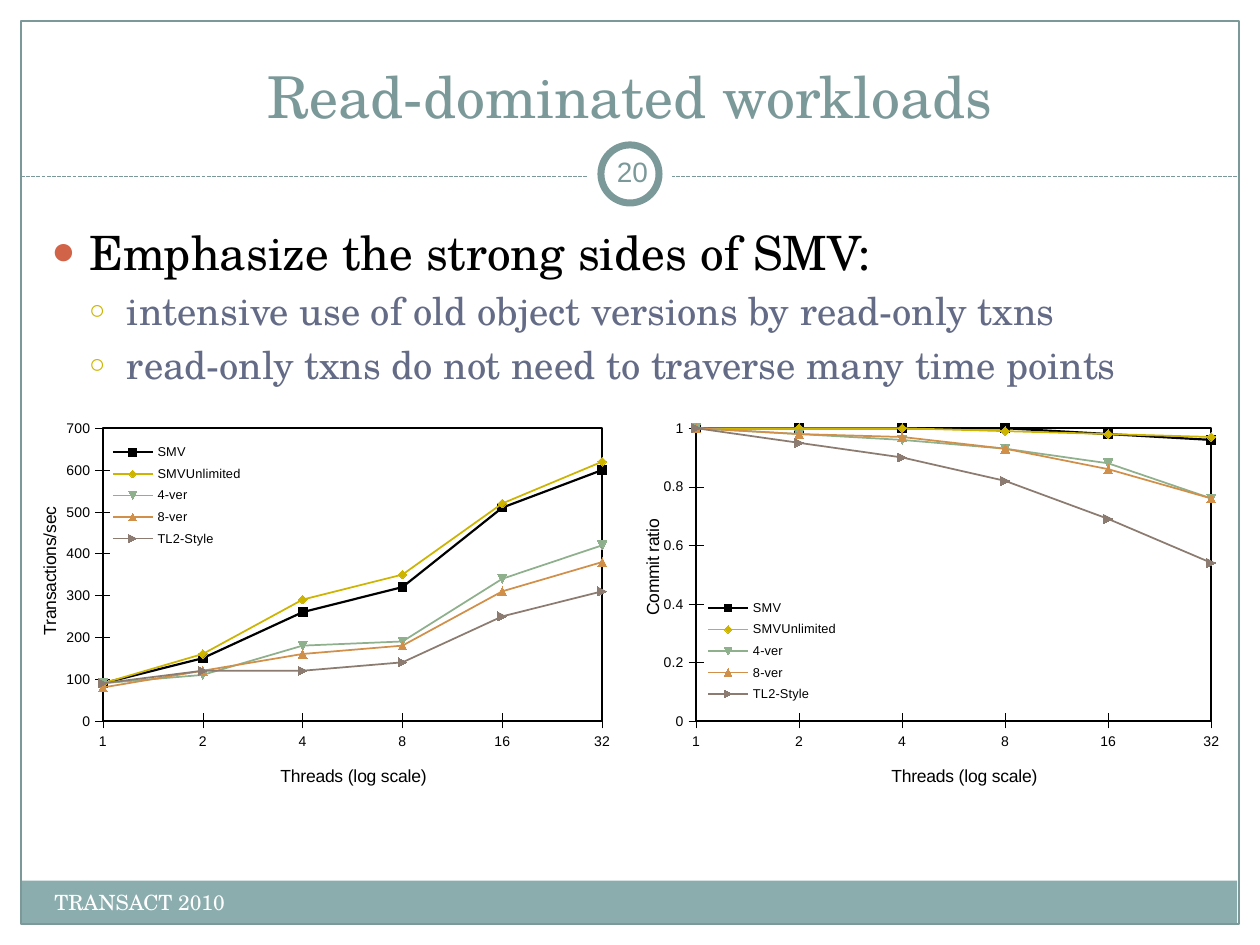
from lxml import etree
from pptx import Presentation
from pptx.chart.data import CategoryChartData
from pptx.dml.color import RGBColor
from pptx.enum.chart import XL_CHART_TYPE, XL_LEGEND_POSITION, XL_MARKER_STYLE, XL_TICK_MARK
from pptx.enum.dml import MSO_LINE
from pptx.enum.shapes import MSO_CONNECTOR, MSO_SHAPE
from pptx.enum.text import MSO_ANCHOR, PP_ALIGN
from pptx.oxml import parse_xml
from pptx.oxml.ns import nsdecls, qn
from pptx.util import Pt

LEFT, CENTER = PP_ALIGN.LEFT, PP_ALIGN.CENTER
TOP, MIDDLE, BOTTOM = MSO_ANCHOR.TOP, MSO_ANCHOR.MIDDLE, MSO_ANCHOR.BOTTOM
CROSS = XL_TICK_MARK.CROSS

BLACK = RGBColor(0x00, 0x00, 0x00)
WHITE = RGBColor(0xFF, 0xFF, 0xFF)
TEAL = RGBColor(0x7C, 0x99, 0x9A)
BAND = RGBColor(0x8C, 0xAD, 0xAE)
SLATE = RGBColor(0x64, 0x6B, 0x86)
RED = RGBColor(0xD1, 0x63, 0x49)
GOLD = RGBColor(0xCC, 0xB4, 0x00)
GREEN = RGBColor(0x8F, 0xB0, 0x8C)
ORANGE = RGBColor(0xD1, 0x90, 0x49)
BROWN = RGBColor(0x8C, 0x7B, 0x70)
SERIF, SANS = "TeX Gyre Schola", "Arial"

# Content
TITLE = "Read-dominated workloads"
FOOTER = "TRANSACT 2010"
PAGE = "20"
POINTS = [
    (0, "Emphasize the strong sides of SMV:"),
    (1, "intensive use of old object versions by read-only txns"),
    (1, "read-only txns do not need to traverse many time points"),
]
# size, text colour, bullet, bullet colour, bullet size in percent
LEVELS = [(27, BLACK, "●", RED, 85), (22, SLATE, "○", GOLD, 70)]
INDENT = 21.6

THREADS = ["1", "2", "4", "8", "16", "32"]
THREADS_TITLE = "Threads (log scale)"
ALGORITHMS = [("SMV", BLACK, 1.25), ("SMVUnlimited", GOLD, 1), ("4-ver", GREEN, 1),
              ("8-ver", ORANGE, 1), ("TL2-Style", BROWN, 1)]
PLOT_AREA = (0.125, 0.086, 0.845, 0.715)
CHARTS = [
    dict(title="Commit ratio", box=(354.2, 224.6, 348.5, 234), top=1, step=0.2,
         threads_at=(0.44, 0.9), title_at=(0.03, 0.3), legend_at=(0.13, 0.49, 0.24, 0.28),
         rows=[[1, 1, 1, 1, 0.98, 0.96],
               [1, 1, 1, 0.99, 0.98, 0.97],
               [1, 0.98, 0.96, 0.93, 0.88, 0.76],
               [1, 0.98, 0.97, 0.93, 0.86, 0.76],
               [1, 0.95, 0.9, 0.82, 0.69, 0.54]]),
    dict(title="Transactions/sec", box=(16.6, 224.6, 337.7, 234), top=700, step=100,
         threads_at=(0.42, 0.9), title_at=(0.01, 0.27), legend_at=(0.13, 0.11, 0.24, 0.28),
         rows=[[90, 150, 260, 320, 510, 600],
               [90, 160, 290, 350, 520, 620],
               [90, 110, 180, 190, 340, 420],
               [80, 120, 160, 180, 310, 380],
               [90, 120, 120, 140, 250, 310]]),
]


def points(*lengths):
    return [Pt(length) for length in lengths]


def set_font(font, size, color=BLACK, name=SANS):
    font.size, font.name, font.bold = Pt(size), name, False
    font.color.rgb = color


def write(frame, text, size=12, color=BLACK, name=SERIF, align=LEFT, first=True):
    paragraph = frame.paragraphs[0] if first else frame.add_paragraph()
    paragraph.alignment = align
    run = paragraph.add_run()
    run.text = text
    set_font(run.font, size, color, name)
    return paragraph


def text_frame(slide, box, anchor=TOP):
    frame = slide.shapes.add_textbox(*points(*box)).text_frame
    frame.word_wrap = True
    frame.vertical_anchor = anchor
    return frame


def add_bullet(paragraph, level):
    size, _, bullet, color, percent = LEVELS[level]
    paragraph.level = level
    paragraph.space_before = Pt(0.2 * size)
    props = paragraph._p.get_or_add_pPr()
    props.set("marL", str(Pt(INDENT * (level + 1))))
    props.set("indent", str(Pt(-INDENT)))
    bullet_color = etree.SubElement(props, qn("a:buClr"))
    etree.SubElement(bullet_color, qn("a:srgbClr"), val=str(color))
    etree.SubElement(props, qn("a:buSzPct"), val=str(percent * 1000))
    etree.SubElement(props, qn("a:buFont"), typeface=SANS)
    etree.SubElement(props, qn("a:buChar"), char=bullet)


def add_shape(slide, kind, box, fill=None, line=None, width=0.75):
    shape = slide.shapes.add_shape(kind, *points(*box))
    shape.shadow.inherit = False
    if fill is None:
        shape.fill.background()
    else:
        shape.fill.solid()
        shape.fill.fore_color.rgb = fill
    if line is None:
        shape.line.fill.background()
    else:
        shape.line.color.rgb = line
        shape.line.width = Pt(width)


def place(part, index, fractions, inner=False):
    """Give a chart part a manual layout, as fractions of the chart."""
    for old in part.findall(qn("c:layout")):
        part.remove(old)
    layout = etree.Element(qn("c:layout"))
    manual = etree.SubElement(layout, qn("c:manualLayout"))
    if inner:
        etree.SubElement(manual, qn("c:layoutTarget"), val="inner")
    for mode in ("xMode", "yMode"):
        etree.SubElement(manual, qn("c:" + mode), val="edge")
    for side, fraction in zip("xywh", fractions):
        etree.SubElement(manual, qn("c:" + side), val=str(fraction))
    part.insert(index, layout)


def style_axis(axis, title, at):
    axis.has_major_gridlines = False
    axis.major_tick_mark = CROSS
    axis.format.line.color.rgb = BLACK
    axis.format.line.width = Pt(0.25)
    set_font(axis.tick_labels.font, 8)
    write(axis.axis_title.text_frame, title, size=10, name=SANS, align=CENTER)
    place(axis.axis_title._element, 1, at)


def add_line_chart(slide, title, box, top, step, threads_at, title_at, legend_at, rows):
    data = CategoryChartData()
    data.categories = THREADS
    for (name, _, _), values in zip(ALGORITHMS, rows):
        data.add_series(name, values)
    chart = slide.shapes.add_chart(XL_CHART_TYPE.LINE_MARKERS, *points(*box), data).chart
    chart.has_title = False
    set_font(chart.font, 8)
    chart.plots[0].vary_by_categories = False

    for series, (_, color, width) in zip(chart.plots[0].series, ALGORITHMS):
        series.smooth = False
        series.format.line.color.rgb = color
        series.format.line.width = Pt(width)
        marker = series.marker
        marker.style, marker.size = XL_MARKER_STYLE.AUTOMATIC, 5
        marker.format.fill.solid()
        marker.format.fill.fore_color.rgb = color
        marker.format.line.color.rgb = color

    style_axis(chart.category_axis, THREADS_TITLE, threads_at)
    value_axis = chart.value_axis
    style_axis(value_axis, title, title_at)
    value_axis.axis_title.text_frame._txBody.bodyPr.set("rot", "-5400000")
    value_axis.minimum_scale, value_axis.maximum_scale = 0, top
    value_axis.major_unit = step
    value_axis.tick_labels.number_format = "General"
    value_axis.tick_labels.number_format_is_linked = False
    # The first and last categories sit on the plot's edges
    value_axis._element.find(qn("c:majorUnit")).addprevious(
        parse_xml(f'<c:crossBetween {nsdecls("c")} val="midCat"/>'))

    chart.has_legend = True
    chart.legend.position = XL_LEGEND_POSITION.RIGHT
    chart.legend.include_in_layout = False
    set_font(chart.legend.font, 7.3)
    place(chart.legend._element, 1, legend_at)

    # Plot frame
    plot_area = chart._chartSpace.chart.plotArea
    place(plot_area, 0, PLOT_AREA, inner=True)
    plot_area.append(parse_xml(
        f'<c:spPr {nsdecls("c", "a")}><a:noFill/><a:ln w="{Pt(1)}"><a:solidFill>'
        f'<a:srgbClr val="{BLACK}"/></a:solidFill></a:ln></c:spPr>'))


prs = Presentation()
prs.slide_width, prs.slide_height = points(720, 540)
slide = prs.slides.add_slide(prs.slide_layouts[6])

# Page frame, footer band, divider and number ring
add_shape(slide, MSO_SHAPE.RECTANGLE, (11.5, 503.3, 695.5, 24.5), fill=BAND)
add_shape(slide, MSO_SHAPE.RECTANGLE, (12, 12, 696, 516), line=TEAL)
divider = slide.shapes.add_connector(MSO_CONNECTOR.STRAIGHT, *points(12, 100.8, 708, 100.8))
divider.line.color.rgb = TEAL
divider.line.width = Pt(0.75)
divider.line.dash_style = MSO_LINE.SQUARE_DOT
etree.SubElement(divider._element.spPr, qn("a:effectLst"))
add_shape(slide, MSO_SHAPE.OVAL, (336, 75.6, 48, 48), fill=WHITE)
add_shape(slide, MSO_SHAPE.OVAL, (343.4, 82.8, 33.2, 33.2), fill=WHITE, line=TEAL, width=4)

# Title, footer and page number
write(text_frame(slide, (24, 18, 672, 59.8), BOTTOM), TITLE, size=33, color=TEAL, align=CENTER)
write(text_frame(slide, (24, 504.7, 282, 28.8)), FOOTER, color=WHITE)
number = text_frame(slide, (343.4, 80.6, 36, 34.6), MIDDLE)
number.margin_left = number.margin_right = number.margin_top = number.margin_bottom = Pt(3.6)
write(number, PAGE, size=16, color=TEAL, name=SANS, align=CENTER)

# Charts
for chart_content in CHARTS:
    add_line_chart(slide, **chart_content)

# Bullet points
body = text_frame(slide, (22.3, 123.8, 669.6, 95.8))
for order, (level, text) in enumerate(POINTS):
    size, color = LEVELS[level][:2]
    add_bullet(write(body, text, size=size, color=color, first=order == 0), level)

prs.save("out.pptx")
